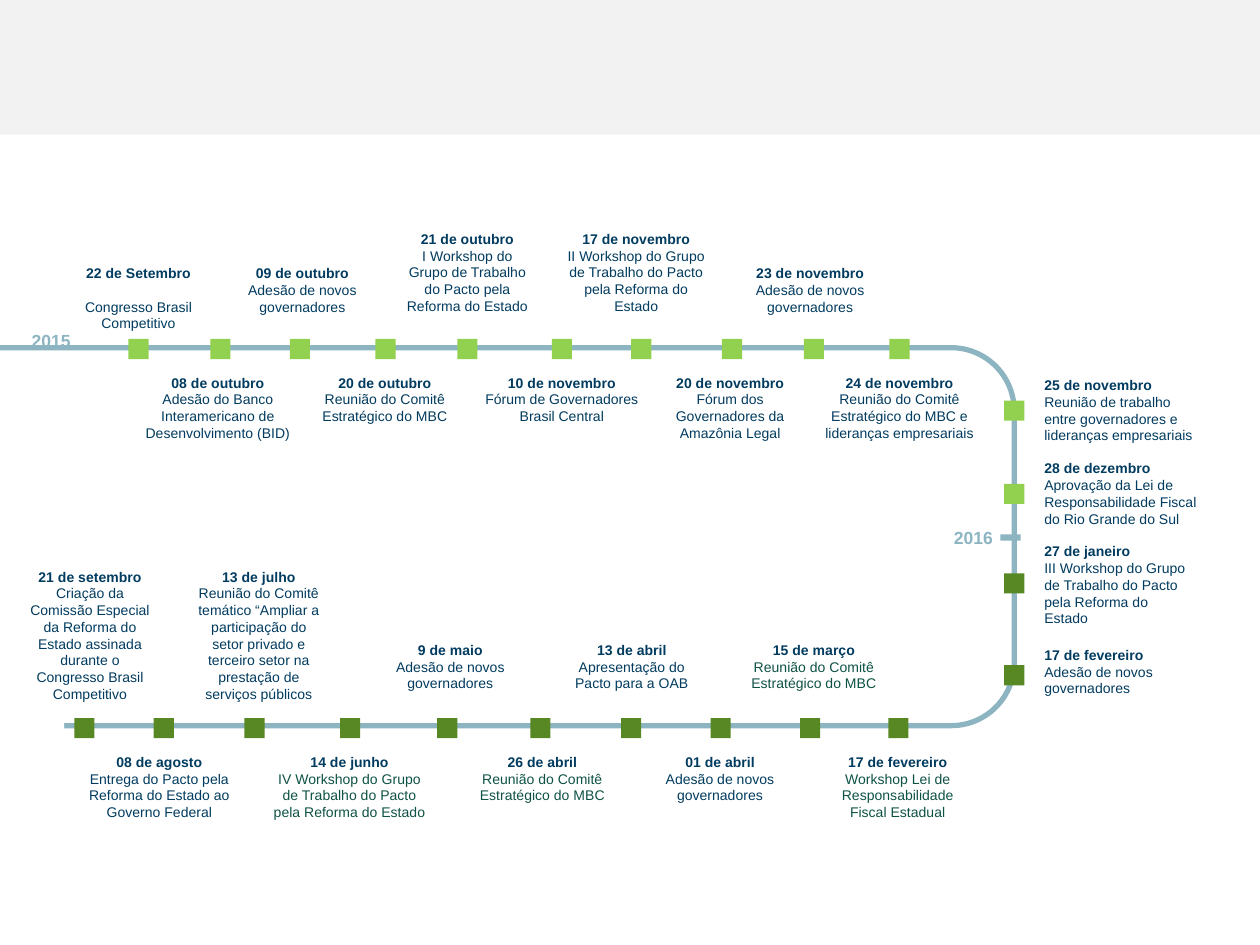
from dataclasses import dataclass

from pptx import Presentation
from pptx.dml.color import RGBColor
from pptx.enum.shapes import MSO_SHAPE as Shape
from pptx.enum.text import MSO_AUTO_SIZE as AutoSize, PP_ALIGN as Align
from pptx.util import Inches, Pt


@dataclass(frozen=True)
class Theme:
    font: str = "Arial"
    event_size: int = 8
    year_size: int = 10
    navy: str = "013B5F"
    forest: str = "0E5245"
    track: str = "8DB5C1"
    marker_2015: str = "92D050"
    marker_2016: str = "588824"
    band: str = "F2F2F2"
    white: str = "FFFFFF"


theme = Theme()

deck = Presentation()
deck.slide_width, deck.slide_height = Inches(10), Inches(7.5)
page = deck.slides.add_slide(deck.slide_layouts[6])


def add_block(left, top, width, height, fill=None, kind=Shape.RECTANGLE):
    """Add a borderless shape, filled only when a colour is given."""
    block = page.shapes.add_shape(
        kind, Inches(left), Inches(top), Inches(width), Inches(height))
    block.shadow.inherit = False
    block.line.fill.background()
    if fill:
        block.fill.solid()
        block.fill.fore_color.rgb = RGBColor.from_string(fill)
    else:
        block.fill.background()
    return block


def add_text(left, top, width, height, align, paragraphs):
    """Add a text box; each paragraph is (text, size, colour, bold, space after)."""
    box = page.shapes.add_textbox(
        Inches(left), Inches(top), Inches(width), Inches(height))
    frame = box.text_frame
    frame.word_wrap = True
    frame.auto_size = AutoSize.SHAPE_TO_FIT_TEXT
    for index, (text, size, colour, bold, gap) in enumerate(paragraphs):
        para = frame.add_paragraph() if index else frame.paragraphs[0]
        for name, value in {"alignment": align, "space_before": Pt(0),
                            "space_after": Pt(gap)}.items():
            setattr(para, name, value)
        span = para.add_run()
        span.text = text
        for name, value in {"name": theme.font, "size": Pt(size),
                            "bold": bold}.items():
            setattr(span.font, name, value)
        span.font.color.rgb = RGBColor.from_string(colour)


# Header band and the track that bends from 2015 into 2016
add_block(0, 0, 10, 1.07, theme.band)
track = add_block(-0.59, 2.76, 8.64, 3, kind=Shape.ROUNDED_RECTANGLE)
track.line.color.rgb = RGBColor.from_string(theme.track)
track.line.width = Pt(3)
add_block(0, 5.66, 0.51, 0.27, theme.white)
add_block(7.94, 4.24, 0.16, 0.05, theme.track)

# Event markers
MARKER = 0.16
top_row = [1.02, 1.67, 2.3, 2.98, 3.63, 4.38, 5.01, 5.73, 6.38, 7.06]
bottom_row = [0.59, 1.22, 1.94, 2.7, 3.47, 4.21, 4.93, 5.64, 6.35, 7.05]
for left in top_row:
    add_block(left, 2.69, MARKER, MARKER, theme.marker_2015)
for left in bottom_row:
    add_block(left, 5.7, MARKER, MARKER, theme.marker_2016)
for top, colour in [(3.18, theme.marker_2015), (3.84, theme.marker_2015),
                    (4.55, theme.marker_2016), (5.28, theme.marker_2016)]:
    add_block(7.97, top, MARKER, MARKER, colour)

# Year labels
for year, left, top in [("2015", 0.13, 2.57), ("2016", 7.45, 4.13)]:
    add_text(left, top, 0.55, 0.27, Align.CENTER,
             [(year, theme.year_size, theme.track, True, 0)])

# Events: left, top, width, line count, date, description
centred_events = [
    (0.57, 2.05, 1.06, 3, "22 de Setembro", "Congresso Brasil Competitivo"),
    (1.84, 2.05, 1.12, 3, "09 de outubro", "Adesão de novos governadores"),
    (3.12, 1.78, 1.18, 5, "21 de outubro",
     "I Workshop do Grupo de Trabalho do Pacto pela Reforma do Estado"),
    (4.38, 1.78, 1.34, 5, "17 de novembro",
     "II Workshop do Grupo de Trabalho do Pacto pela Reforma do Estado"),
    (5.84, 2.05, 1.18, 3, "23 de novembro", "Adesão de novos governadores"),
    (1.05, 2.92, 1.36, 4, "08 de outubro",
     "Adesão do Banco Interamericano de Desenvolvimento (BID)"),
    (2.4, 2.92, 1.31, 3, "20 de outubro", "Reunião do Comitê Estratégico do MBC"),
    (3.73, 2.92, 1.46, 3, "10 de novembro", "Fórum de Governadores Brasil Central"),
    (5.25, 2.92, 1.09, 4, "20 de novembro",
     "Fórum dos Governadores da Amazônia Legal"),
    (6.42, 2.92, 1.44, 4, "24 de novembro",
     "Reunião do Comitê Estratégico do MBC e lideranças empresariais"),
    (0.13, 4.46, 1.17, 8, "21 de setembro",
     "Criação da Comissão Especial da Reforma do Estado assinada durante o "
     "Congresso Brasil Competitivo"),
    (1.47, 4.46, 1.17, 8, "13 de julho",
     "Reunião do Comitê temático “Ampliar a participação do setor privado e "
     "terceiro setor na prestação de serviços públicos"),
    (3.01, 5.04, 1.13, 3, "9 de maio", "Adesão de novos governadores"),
    (4.35, 5.04, 1.33, 3, "13 de abril", "Apresentação do Pacto para a OAB"),
    (0.59, 5.93, 1.35, 4, "08 de agosto",
     "Entrega do Pacto pela Reforma do Estado ao Governo Federal"),
    (5.13, 5.93, 1.17, 3, "01 de abril", "Adesão de novos governadores"),
]
green_events = [
    (5.79, 5.04, 1.34, 3, "15 de março", "Reunião do Comitê Estratégico do MBC"),
    (2.06, 5.93, 1.43, 4, "14 de junho",
     "IV Workshop do Grupo de Trabalho do Pacto pela Reforma do Estado"),
    (3.64, 5.93, 1.33, 3, "26 de abril", "Reunião do Comitê Estratégico do MBC"),
    (6.55, 5.93, 1.15, 4, "17 de fevereiro",
     "Workshop Lei de Responsabilidade Fiscal Estadual"),
]
side_events = [
    (8.19, 2.94, 1.44, 4, "25 de novembro",
     "Reunião de trabalho entre governadores e lideranças empresariais"),
    (8.19, 3.6, 1.44, 4, "28 de dezembro",
     "Aprovação da Lei de Responsabilidade Fiscal do Rio Grande do Sul"),
    (8.19, 4.26, 1.37, 5, "27 de janeiro",
     "III Workshop do Grupo de Trabalho do Pacto pela Reforma do Estado"),
    (8.19, 5.08, 1.44, 3, "17 de fevereiro", "Adesão de novos governadores"),
]
date_gaps = {"22 de Setembro": 9.6}

for events, align, colour in [(centred_events, Align.CENTER, theme.navy),
                              (green_events, Align.CENTER, theme.forest),
                              (side_events, Align.LEFT, theme.navy)]:
    for left, top, width, lines, date, description in events:
        add_text(left, top, width, 0.1 + 0.135 * lines, align, [
            (date, theme.event_size, theme.navy, True, date_gaps.get(date, 0)),
            (description, theme.event_size, colour, False, 0),
        ])

deck.save("out.pptx")
